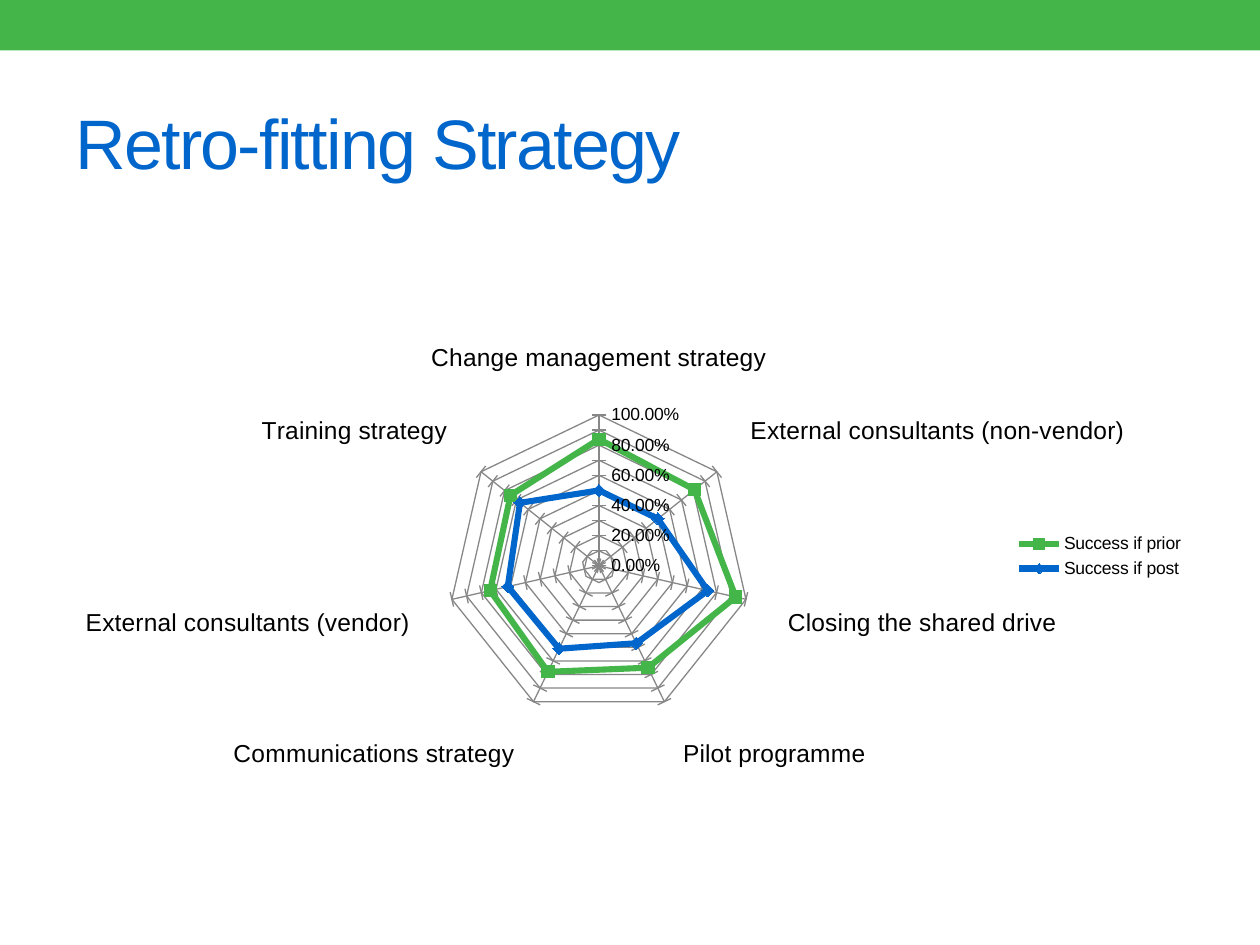
from dataclasses import dataclass

import pptx
import pptx.chart.data
import pptx.dml.color
import pptx.enum.chart
import pptx.enum.shapes
import pptx.enum.text
import pptx.util

Inches = pptx.util.Inches
Pt = pptx.util.Pt

FONT = "Arial"
GREEN, BLUE, BLACK, GREY = "44B649", "0066CC", "000000", "878787"
STRATEGIES = [
    "Change management strategy",
    "External consultants (non-vendor)",
    "Closing the shared drive",
    "Pilot programme",
    "Communications strategy",
    "External consultants (vendor)",
    "Training strategy",
]


@dataclass
class SuccessSeries:
    name: str
    values: list[float]
    color: str
    marker: pptx.enum.chart.XL_MARKER_STYLE


SERIES = [
    SuccessSeries("Success if prior", [0.84, 0.81, 0.93, 0.75, 0.78, 0.74, 0.75],
                  GREEN, pptx.enum.chart.XL_MARKER_STYLE.SQUARE),
    SuccessSeries("Success if post", [0.5, 0.5, 0.74, 0.57, 0.61, 0.62, 0.67],
                  BLUE, pptx.enum.chart.XL_MARKER_STYLE.DIAMOND),
]


def rgb(color: str) -> pptx.dml.color.RGBColor:
    return pptx.dml.color.RGBColor.from_string(color)


def style_font(font, size: float, color: str) -> None:
    font.name = FONT
    font.size = Pt(size)
    font.color.rgb = rgb(color)


def style_line(line, color: str, width: float) -> None:
    line.color.rgb = rgb(color)
    line.width = Pt(width)


def add_band(slide) -> None:
    band = slide.shapes.add_shape(
        pptx.enum.shapes.MSO_SHAPE.RECTANGLE, 0, 0, Inches(10), Inches(0.4))
    band.shadow.inherit = False
    band.fill.solid()
    band.fill.fore_color.rgb = rgb(GREEN)
    band.line.fill.background()


def set_title(slide, text: str) -> None:
    title = slide.shapes.title
    title.left, title.top = Inches(0.5), Inches(0.58)
    title.width, title.height = Inches(9), Inches(1.08)
    text_frame = title.text_frame
    text_frame.text = text
    text_frame.vertical_anchor = pptx.enum.text.MSO_ANCHOR.MIDDLE
    paragraph = text_frame.paragraphs[0]
    paragraph.alignment = pptx.enum.text.PP_ALIGN.LEFT
    run = paragraph.runs[0]
    style_font(run.font, 40, BLUE)
    run.font._element.set("spc", "-100")  # tighten letters by one point


def style_axes(chart) -> None:
    tick_mark = pptx.enum.chart.XL_TICK_MARK
    category_axis, value_axis = chart.category_axis, chart.value_axis
    category_axis.major_tick_mark = tick_mark.NONE
    style_font(category_axis.tick_labels.font, 14, BLACK)

    value_axis.minimum_scale, value_axis.maximum_scale = 0, 1
    value_axis.major_unit = 0.1
    value_axis.major_tick_mark = tick_mark.OUTSIDE
    value_axis.tick_labels.number_format = "0.00%"
    value_axis.tick_labels.number_format_is_linked = False
    style_font(value_axis.tick_labels.font, 10, BLACK)

    for axis in (category_axis, value_axis):
        axis.minor_tick_mark = tick_mark.NONE
        axis.has_major_gridlines = True
        style_line(axis.major_gridlines.format.line, GREY, 0.75)
        style_line(axis.format.line, GREY, 0.75)


def add_radar(slide, series_list: list[SuccessSeries]) -> None:
    data = pptx.chart.data.CategoryChartData(number_format="0.00%")
    data.categories = STRATEGIES
    for series in series_list:
        data.add_series(series.name, series.values)
    chart = slide.shapes.add_chart(
        pptx.enum.chart.XL_CHART_TYPE.RADAR_MARKERS,
        Inches(0.5), Inches(1.75), Inches(9), Inches(5.33), data).chart
    chart.has_title = False
    style_font(chart.font, 10, BLACK)
    style_axes(chart)

    chart.has_legend = True
    chart.legend.position = pptx.enum.chart.XL_LEGEND_POSITION.RIGHT
    chart.legend.include_in_layout = False
    style_font(chart.legend.font, 10, BLACK)

    chart.plots[0].vary_by_categories = False
    for plotted, series in zip(chart.plots[0].series, series_list):
        plotted.smooth = False
        style_line(plotted.format.line, series.color, 3.5)
        plotted.marker.style = series.marker
        plotted.marker.size = 7
        plotted.marker.format.fill.solid()
        plotted.marker.format.fill.fore_color.rgb = rgb(series.color)
        style_line(plotted.marker.format.line, series.color, 0.75)


def main() -> None:
    presentation = pptx.Presentation()
    presentation.slide_width = Inches(10)
    presentation.slide_height = Inches(7.5)
    slide = presentation.slides.add_slide(presentation.slide_layouts[5])

    # Header
    add_band(slide)
    set_title(slide, "Retro-fitting Strategy")

    # Success rates by strategy
    add_radar(slide, SERIES)
    presentation.save("out.pptx")


if __name__ == "__main__":
    main()
